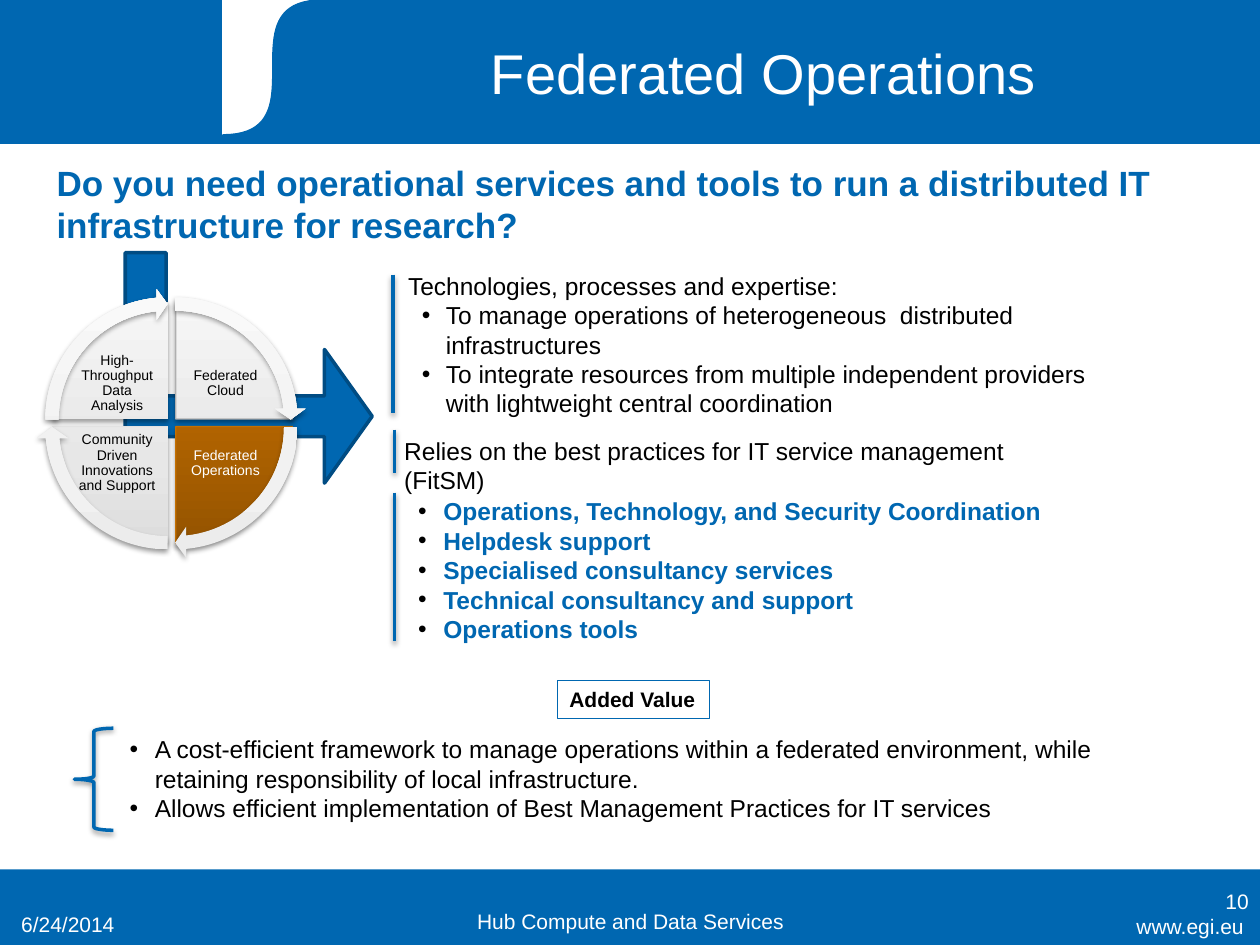
from dataclasses import dataclass
from typing import Optional

from pptx import Presentation
from pptx.dml.color import RGBColor
from pptx.enum.shapes import MSO_CONNECTOR as Connector, MSO_SHAPE as Preset
from pptx.enum.text import MSO_ANCHOR as Anchor, PP_ALIGN as Align
from pptx.oxml import parse_xml
from pptx.oxml.ns import nsdecls, qn
from pptx.util import Inches, Pt


@dataclass(frozen=True)
class Theme:
    font: str = "Arial"
    blue: str = "0067B1"
    dark_blue: str = "004C83"
    white: str = "FFFFFF"
    black: str = "000000"
    gray: str = "AFAFAF"
    orange: str = "C46F00"
    segment: tuple = ((0, "DDDDDD"), (35, "E7E7E7"), (100, "F6F6F6"))
    active: tuple = ((0, "955400"), (80, "C26D00"), (100, "C36E00"))
    rim: tuple = ((0, "ECECEC"), (35, "F1F1F1"), (100, "F9F9F9"))
    title: float = 32
    question: float = 20
    body: float = 14
    small: float = 12
    label: float = 8


THEME = Theme()


@dataclass(frozen=True)
class TextBlock:
    box: tuple
    lines: tuple
    size: float = THEME.body
    color: str = THEME.black
    bold: bool = False
    align: Align = Align.LEFT
    anchor: Anchor = Anchor.TOP
    spacing: Optional[float] = None
    after: Optional[float] = None
    indent: Optional[tuple] = None
    first_bullet: int = 0
    inset: Optional[float] = None
    wrap: bool = True


@dataclass(frozen=True)
class Quadrant:
    name: str
    start: int
    end: int
    column: int
    row: int
    stops: tuple = THEME.segment
    color: str = THEME.black
    outline: Optional[str] = None


def rgb(code: str) -> RGBColor:
    return RGBColor.from_string(code)


def add_bullet(paragraph, margin: float, hanging: float) -> None:
    props = paragraph._p.get_or_add_pPr()
    props.set("marL", str(Inches(margin)))
    props.set("indent", str(Inches(hanging)))
    for xml in (
        f'<a:buClr {nsdecls("a")}><a:srgbClr val="{THEME.black}"/></a:buClr>',
        f'<a:buFont {nsdecls("a")} typeface="{THEME.font}"/>',
        f'<a:buChar {nsdecls("a")} char="•"/>',
    ):
        props.append(parse_xml(xml))


def write(shape, block: TextBlock) -> None:
    frame = shape.text_frame
    frame.text = "\n".join(block.lines)
    frame.word_wrap = block.wrap
    frame.vertical_anchor = block.anchor
    if block.inset is not None:
        frame.margin_left = frame.margin_right = Inches(block.inset)
        frame.margin_top = frame.margin_bottom = Inches(block.inset)
    for index, paragraph in enumerate(frame.paragraphs):
        if block.indent and index >= block.first_bullet:
            add_bullet(paragraph, *block.indent)
        paragraph.alignment = block.align
        if block.spacing:
            paragraph.line_spacing = block.spacing
        if block.after:
            paragraph.space_after = Pt(block.after)
        for run in paragraph.runs:
            run.font.name = THEME.font
            run.font.size = Pt(block.size)
            run.font.bold = block.bold
            run.font.color.rgb = rgb(block.color)


def add_text(slide, block: TextBlock) -> None:
    write(slide.shapes.add_textbox(*map(Inches, block.box)), block)


def cast_shadow(item, opacity: int = 38, distance: float = 1.6) -> None:
    props = item._element.spPr
    effects = props.find(qn("a:effectLst"))
    if effects is None:
        effects = parse_xml(f'<a:effectLst {nsdecls("a")}/>')
        props.append(effects)
    effects.append(parse_xml(
        f'<a:outerShdw {nsdecls("a")} blurRad="{Pt(3.1)}" dist="{Pt(distance)}" dir="5400000" '
        f'rotWithShape="0"><a:srgbClr val="{THEME.black}"><a:alpha val="{opacity * 1000}"/>'
        '</a:srgbClr></a:outerShdw>'))


def paint(shape, fill: Optional[str], line: Optional[str] = None, width: float = 0.75) -> None:
    shape.shadow.inherit = False
    if fill:
        shape.fill.solid()
        shape.fill.fore_color.rgb = rgb(fill)
    else:
        shape.fill.background()
    if line:
        shape.line.color.rgb = rgb(line)
        shape.line.width = Pt(width)
    else:
        shape.line.fill.background()


def paint_gradient(shape, stops: tuple, line: Optional[str] = None) -> None:
    paint(shape, None, line)
    props = shape._element.spPr
    marks = "".join(f'<a:gs pos="{position * 1000}"><a:srgbClr val="{color}"/></a:gs>'
                    for position, color in stops)
    gradient = parse_xml(f'<a:gradFill {nsdecls("a")} rotWithShape="1"><a:gsLst>{marks}</a:gsLst>'
                         '<a:lin ang="16200000" scaled="0"/></a:gradFill>')
    props.replace(props.find(qn("a:noFill")), gradient)


def add_preset(slide, preset: Preset, box: tuple, adjustments: tuple = ()):
    shape = slide.shapes.add_shape(preset, *map(Inches, box))
    for index, value in enumerate(adjustments):
        shape.adjustments[index] = value
    return shape


def add_banner(slide) -> None:
    paint(add_preset(slide, Preset.RECTANGLE, (0, 6.9, 10, 0.6)), THEME.blue)
    paint(add_preset(slide, Preset.RECTANGLE, (0, 0, 10, 1.14)), THEME.blue, THEME.blue)
    left, right, bottom, crest = 1.77, 3.74, 1.07, 2.56
    paint(add_preset(slide, Preset.RECTANGLE, (left, 0, right - left, bottom)),
          THEME.white, THEME.white)
    steps = 40
    curve = []
    for step in range(1, steps + 1):
        t = step / steps
        rise = 3 * t * (1 - t) ** 2 + t ** 3
        fall = (1 - t) ** 3 + 3 * t * (1 - t) ** 2
        curve.append((Inches(left + (crest - left) * rise), Inches(bottom * fall)))
    outline = slide.shapes.build_freeform(Inches(right), 0)
    outline.add_line_segments([(Inches(right), Inches(bottom)), (Inches(left), Inches(bottom))]
                              + curve, close=True)
    paint(outline.convert_to_shape(), THEME.blue, THEME.blue)


def add_rule(slide, x: float, top: float, bottom: float) -> None:
    rule = slide.shapes.add_connector(Connector.STRAIGHT, *map(Inches, (x, top, x, bottom)))
    rule.line.color.rgb = rgb(THEME.blue)
    rule.line.width = Pt(2)
    cast_shadow(rule)


def add_wheel(slide, quadrants: tuple) -> None:
    arrow = add_preset(slide, Preset.BENT_UP_ARROW, (1.06, 1.94, 1.83, 1.96), (0.177, 0.29, 0.207))
    paint(arrow, THEME.blue, THEME.dark_blue, 2)
    arrow.rotation = 270
    for flip in ("flipH", "flipV"):
        arrow._element.spPr.find(qn("a:xfrm")).set(flip, "1")
    gap = 0.06
    for part in quadrants:
        box = (0.41 + gap * part.column, 2.4 + gap * part.row, 1.85, 1.85)
        pie = add_preset(slide, Preset.PIE, box, (part.start, part.end))
        paint_gradient(pie, part.stops, part.outline)
        cast_shadow(pie, *((35, 1.8) if part.stops == THEME.active else ()))
        add_text(slide, TextBlock(
            (0.59 + 0.86 * part.column, 2.79 + 0.63 * part.row, 0.68, 0.51), (part.name,),
            THEME.label, part.color, align=Align.CENTER, anchor=Anchor.MIDDLE,
            spacing=0.9, after=2.8, inset=0.01))
    for part in quadrants:
        box = (0.29 + gap * part.column, 2.29 + gap * part.row, 2.08, 2.08)
        tip = (part.end or 216) - 3.275
        rim = add_preset(slide, Preset.CIRCULAR_ARROW, box,
                         (0.051, 3.275, tip, part.start, 0.059))
        paint_gradient(rim, THEME.rim)
        cast_shadow(rim)


QUADRANTS = (
    Quadrant("Federated Cloud", 162, 0, 1, 0, outline=THEME.gray),
    Quadrant("Federated Operations", 0, 54, 1, 1, THEME.active, THEME.white, THEME.orange),
    Quadrant("Community Driven Innovations and Support", 54, 108, 0, 1),
    Quadrant("High-Throughput Data Analysis", 108, 162, 0, 0),
)

TEXTS = (
    TextBlock((8.39, 7.2, 1.58, 0.31), ("www.egi.eu",), THEME.small, THEME.white,
              align=Align.RIGHT),
    TextBlock((2.32, 0.13, 7.48, 0.95), ("Federated Operations",), THEME.title, THEME.white,
              align=Align.CENTER, anchor=Anchor.MIDDLE, spacing=0.9),
    TextBlock((0.07, 7.08, 2.33, 0.4), ("6/24/2014",), THEME.small, THEME.white,
              anchor=Anchor.BOTTOM),
    TextBlock((3.42, 7.06, 3.17, 0.4), ("Hub Compute and Data Services",), THEME.small,
              THEME.white, align=Align.CENTER, anchor=Anchor.BOTTOM),
    TextBlock((7.68, 6.95, 2.33, 0.4), ("10",), THEME.small, THEME.white,
              align=Align.RIGHT, anchor=Anchor.MIDDLE),
    TextBlock((0.35, 1.23, 9.21, 0.77),
              ("Do you need operational services and tools to run a distributed IT "
               "infrastructure for research?",), THEME.question, THEME.blue, True),
    TextBlock((3.14, 2.1, 5.64, 1.28),
              ("Technologies, processes and expertise:",
               "To manage operations of heterogeneous  distributed infrastructures",
               "To integrate resources from multiple independent providers with lightweight "
               "central coordination"), indent=(0.3, -0.19), first_bullet=1),
    TextBlock((3.13, 3.89, 5.52, 1.28),
              ("Operations, Technology, and Security Coordination", "Helpdesk support",
               "Specialised consultancy services", "Technical consultancy and support",
               "Operations tools"), color=THEME.blue, bold=True, indent=(0.29, -0.2)),
    TextBlock((3.11, 3.41, 5.64, 0.34),
              ("Relies on the best practices for IT service management (FitSM)",)),
    TextBlock((0.93, 5.78, 8.09, 0.81),
              ("A cost-efficient framework to manage operations within a federated environment, "
               "while retaining responsibility of local infrastructure.",
               "Allows efficient implementation of Best Management Practices for IT services"),
              indent=(0.2, -0.2)),
)
ADDED_VALUE = TextBlock((4.42, 5.4, 1.21, 0.3), ("Added Value",), THEME.small, bold=True, wrap=False)
RULES = ((3.12, 2.18, 3.28), (3.13, 3.91, 5.09), (3.13, 3.41, 3.75))


def main() -> None:
    deck = Presentation()
    deck.slide_width, deck.slide_height = Inches(10), Inches(7.5)
    slide = deck.slides.add_slide(deck.slide_layouts[6])
    add_banner(slide)
    for block in TEXTS:
        add_text(slide, block)
    for rule in RULES:
        add_rule(slide, *rule)
    badge = add_preset(slide, Preset.RECTANGLE, ADDED_VALUE.box)
    paint(badge, THEME.white, THEME.blue, 0.25)
    write(badge, ADDED_VALUE)
    add_wheel(slide, QUADRANTS)
    brace = add_preset(slide, Preset.LEFT_BRACE, (0.59, 5.78, 0.31, 0.81))
    paint(brace, None, THEME.blue, 2)
    cast_shadow(brace)
    deck.save("out.pptx")


if __name__ == "__main__":
    main()
